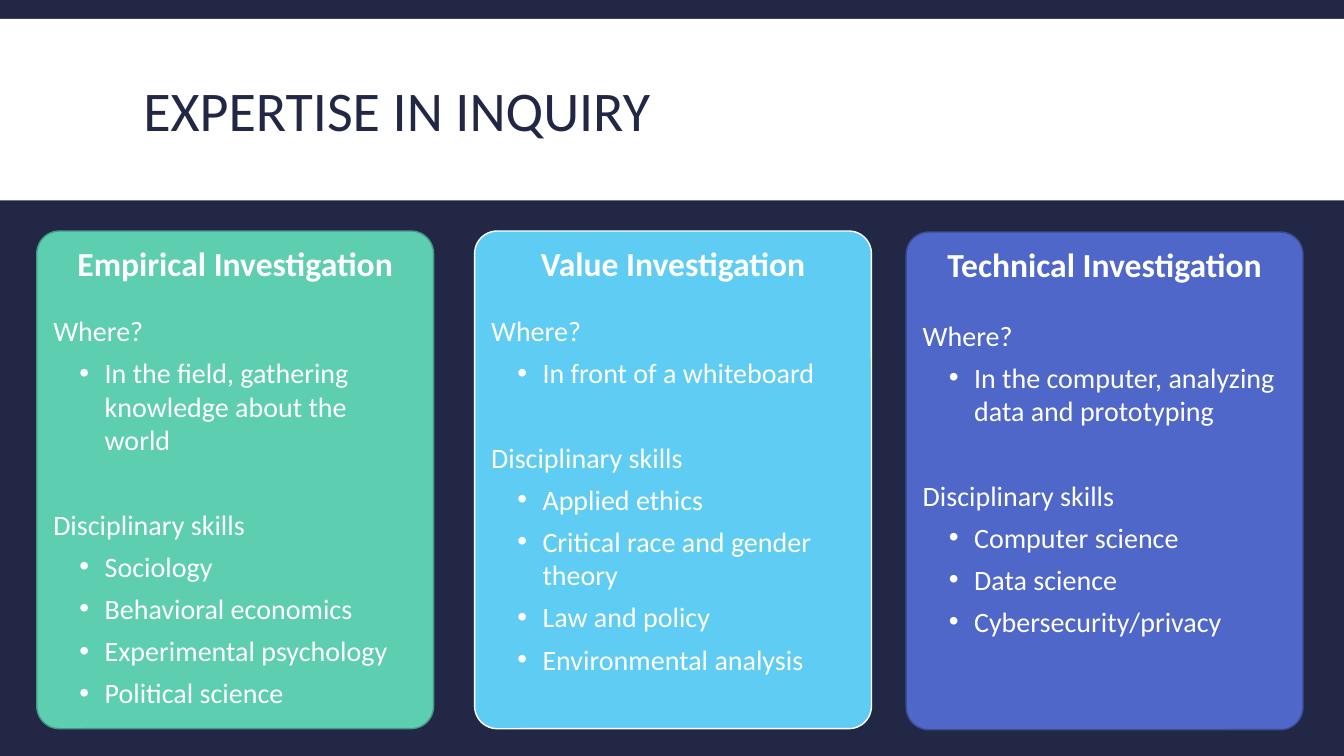
from dataclasses import dataclass

from lxml.etree import SubElement
from pptx import Presentation
from pptx.dml.color import RGBColor
from pptx.enum.shapes import MSO_SHAPE as Shape
from pptx.enum.text import MSO_ANCHOR as Anchor, PP_ALIGN as Align
from pptx.oxml.ns import qn
from pptx.slide import Slide
from pptx.text.text import TextFrame, _Paragraph as Paragraph
from pptx.util import Pt

EMU_PER_PX = 9525
FONT = "Calibri"
COLOURS = {
    "navy": "212745",
    "white": "FFFFFF",
    "green": "5DCEAF",
    "green edge": "459881",
    "sky": "5ECCF3",
    "blue": "4E67C8",
    "blue edge": "3A4C94",
}

# Card geometry in px, spacing in points
CARD_WIDTH, CARD_HEIGHT = 378, 474
CARD_ROUNDING = 0.057
BULLET_INDENT, BULLET_HANG = 49, 24
LINE_GAP, SECTION_GAP = 6, 36.4


@dataclass
class Card:
    left: int
    top: int
    fill: str
    edge: str
    heading: str
    heading_gap: float
    where: str
    skills: list[str]


CARDS = [
    Card(452, 220, "sky", "white", "Value Investigation", 22,
         "In front of a whiteboard",
         ["Applied ethics", "Critical race and gender theory",
          "Law and policy", "Environmental analysis"]),
    Card(35, 220, "green", "green edge", "Empirical Investigation", 22,
         "In the field, gathering knowledge about the world",
         ["Sociology", "Behavioral economics",
          "Experimental psychology", "Political science"]),
    Card(863, 221, "blue", "blue edge", "Technical Investigation", 24.4,
         "In the computer, analyzing data and prototyping",
         ["Computer science", "Data science", "Cybersecurity/privacy"]),
]


def px(length: int) -> int:
    return length * EMU_PER_PX


def colour(name: str) -> RGBColor:
    return RGBColor.from_string(COLOURS[name])


def add_panel(page: Slide, kind: Shape, left: int, top: int,
              width: int, height: int, fill: str):
    panel = page.shapes.add_shape(kind, px(left), px(top), px(width), px(height))
    panel.shadow.inherit = False
    panel.fill.solid()
    panel.fill.fore_color.rgb = colour(fill)
    panel.line.fill.background()
    return panel


def add_run(para: Paragraph, text: str, size: int, ink: str,
            bold: bool = False) -> None:
    run = para.add_run()
    run.text = text
    run.font.name = FONT
    run.font.size = Pt(size)
    run.font.bold = bold
    run.font.color.rgb = colour(ink)


def add_line(frame: TextFrame, text: str, gap: float = LINE_GAP,
             bullet: bool = False) -> None:
    para = frame.add_paragraph()
    para.alignment = Align.LEFT
    para.space_after = Pt(gap)
    if bullet:
        para.level = 1
        properties = para._p.get_or_add_pPr()
        properties.set("marL", str(px(BULLET_INDENT)))
        properties.set("indent", str(-px(BULLET_HANG)))
        SubElement(properties, qn("a:buFont"), typeface="Arial")
        SubElement(properties, qn("a:buChar"), char="•")
    add_run(para, text, 20, "white")


def add_card(page: Slide, card: Card) -> None:
    box = add_panel(page, Shape.ROUNDED_RECTANGLE, card.left, card.top,
                    CARD_WIDTH, CARD_HEIGHT, card.fill)
    box.adjustments[0] = CARD_ROUNDING
    box.line.color.rgb = colour(card.edge)
    box.line.width = Pt(1)

    frame = box.text_frame
    frame.word_wrap = True
    frame.vertical_anchor = Anchor.TOP
    heading = frame.paragraphs[0]
    heading.alignment = Align.CENTER
    heading.space_after = Pt(card.heading_gap)
    add_run(heading, card.heading, 24, "white", bold=True)

    add_line(frame, "Where?")
    add_line(frame, card.where, SECTION_GAP, bullet=True)
    add_line(frame, "Disciplinary skills")
    for skill in card.skills:
        add_line(frame, skill, bullet=True)


def add_title(page: Slide, text: str) -> None:
    box = page.shapes.add_textbox(px(127), px(30), px(1027), px(158))
    frame = box.text_frame
    frame.word_wrap = True
    frame.vertical_anchor = Anchor.MIDDLE
    para = frame.paragraphs[0]
    para.line_spacing = 0.85
    add_run(para, text, 40, "navy")


def main() -> None:
    deck = Presentation()
    deck.slide_width, deck.slide_height = px(1280), px(720)
    page = deck.slides.add_slide(deck.slide_layouts[6])
    page.background.fill.solid()
    page.background.fill.fore_color.rgb = colour("navy")

    # Title band
    add_panel(page, Shape.RECTANGLE, 0, 18, 1280, 173, "white")
    add_title(page, "EXPERTISE IN INQUIRY")

    # Investigation cards
    for card in CARDS:
        add_card(page, card)

    deck.save("out.pptx")


if __name__ == "__main__":
    main()
